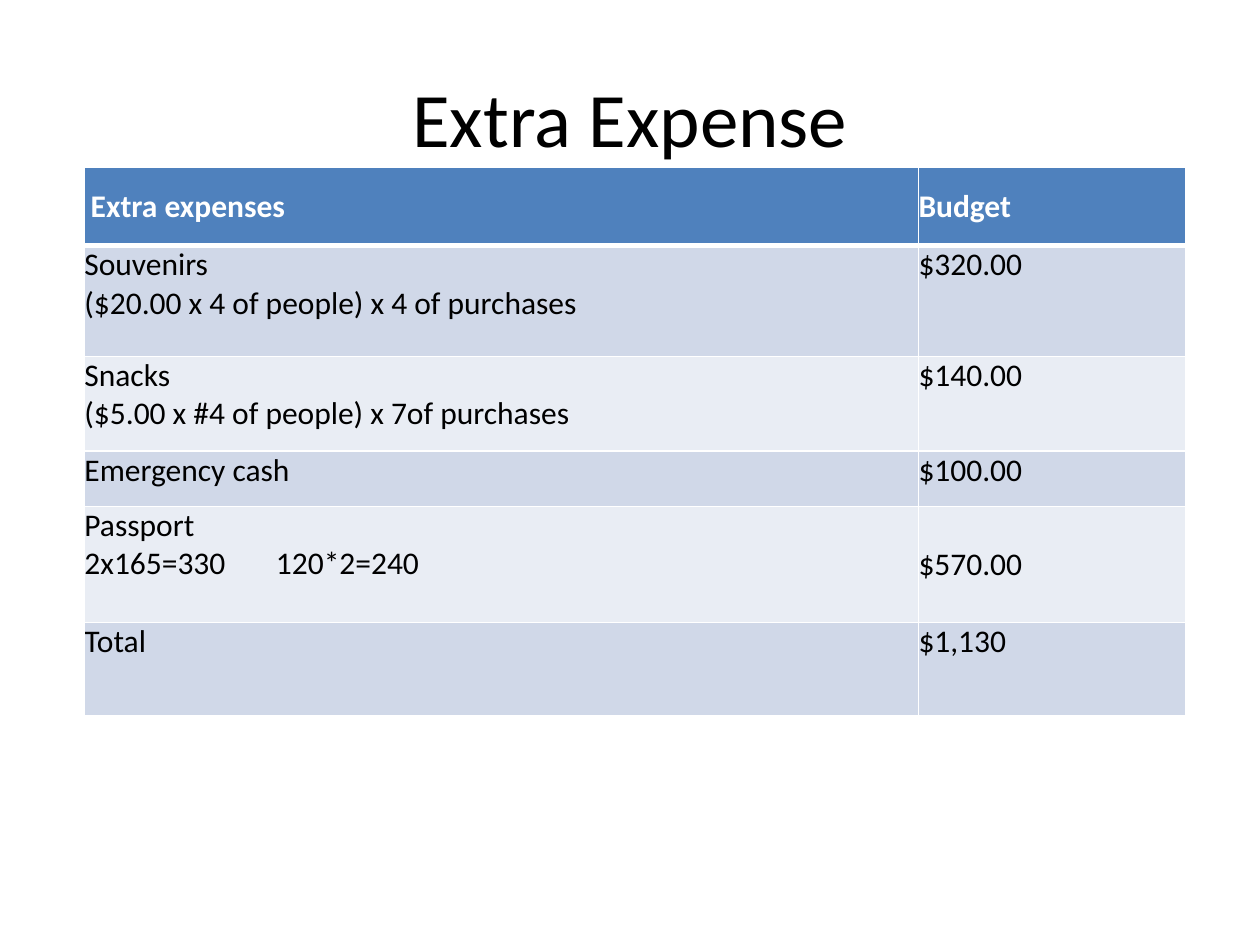
"""Build the extra expense budget slide."""
from pptx import Presentation
from pptx import util as u
from pptx.dml.color import RGBColor
from pptx.enum import text
from pptx.oxml.ns import qn
from lxml import etree

BLACK = RGBColor(0x00, 0x00, 0x00)
WHITE = RGBColor(0xFF, 0xFF, 0xFF)
HEADER_BLUE = RGBColor(0x4F, 0x81, 0xBD)
BANDS = RGBColor(0xD0, 0xD8, 0xE8), RGBColor(0xE9, 0xED, 0xF4)

COLUMN_WIDTHS = 6.62, 2.12
ROW_HEIGHTS = 0.62, 0.88, 0.75, 0.44, 0.92, 0.74
LINE_HEIGHT = 0.31
TAB_STOP = 1.52
EXPENSES = [
    ("Extra expenses", "Budget"),
    ("Souvenirs\n($20.00 x 4 of people) x 4 of purchases", "$320.00"),
    ("Snacks\n($5.00 x #4 of people) x 7of purchases", "$140.00"),
    ("Emergency cash", "$100.00"),
    ("Passport\n2x165=330\t120*2=240", "$570.00"),
    ("Total", "$1,130"),
]


def write(frame, words, size=18, color=BLACK, bold=False, align=text.PP_ALIGN.LEFT, font="Calibri"):
    """Fill a text frame with one formatted paragraph per line."""
    for index, line in enumerate(words.split("\n")):
        para = frame.add_paragraph() if index else frame.paragraphs[0]
        para.alignment = align
        if "\t" in line:
            tabs = etree.SubElement(para._p.get_or_add_pPr(), qn("a:tabLst"))
            etree.SubElement(tabs, qn("a:tab"), pos=str(u.Inches(TAB_STOP)), algn="l")
        span = para.add_run()
        span.text = line
        span.font.name = font
        span.font.size = u.Pt(size)
        span.font.bold = bold
        span.font.color.rgb = color


class SlideBuilder:
    """Hold the border style and the current slide."""

    def __init__(self, slide, border_color=WHITE):
        self.slide = slide
        self.border_color = border_color

    def title(self, words, left, top, width, height):
        """Add a centred title."""
        box = self.slide.shapes.add_textbox(*map(u.Inches, (left, top, width, height)))
        frame = box.text_frame
        frame.word_wrap = True
        frame.vertical_anchor = text.MSO_ANCHOR.MIDDLE
        write(frame, words, size=44, align=text.PP_ALIGN.CENTER)

    def borders(self, cell, **widths):
        """Draw cell edges, each with its width in points."""
        properties = cell._tc.get_or_add_tcPr()
        for index, (side, width) in enumerate(widths.items()):
            line = etree.Element(qn(f"a:ln{side}"), w=str(u.Pt(width)))
            fill = etree.SubElement(line, qn("a:solidFill"))
            etree.SubElement(fill, qn("a:srgbClr"), val=str(self.border_color))
            properties.insert(index, line)

    def table(self, rows, left, top, widths, heights):
        """Add a banded table with a header row."""
        size = sum(widths), sum(heights)
        frame = self.slide.shapes.add_table(
            len(rows), len(widths), *map(u.Inches, (left, top, *size)))
        table = frame.table
        for column, width in zip(table.columns, widths):
            column.width = u.Inches(width)
        for row, height in zip(table.rows, heights):
            row.height = u.Inches(height)
        for number, row in enumerate(rows):
            header = number == 0
            for column, words in enumerate(row):
                cell = table.cell(number, column)
                cell.margin_left = cell.margin_right = cell.margin_top = cell.margin_bottom = 0
                cell.fill.solid()
                cell.fill.fore_color.rgb = HEADER_BLUE if header else BANDS[(number - 1) % 2]
                cell.vertical_anchor = text.MSO_ANCHOR.MIDDLE if header else text.MSO_ANCHOR.TOP
                write(cell.text_frame, words, color=WHITE if header else BLACK, bold=header)
                self.borders(cell, L=1, R=1, T=3 if number == 1 else 1, B=3 if header else 1)
        return table


def main():
    """Build and save the deck."""
    deck = Presentation()
    deck.slide_width, deck.slide_height = u.Inches(10), u.Inches(7.5)
    page = SlideBuilder(deck.slides.add_slide(deck.slide_layouts[6]))
    page.title("Extra Expense", 0.5, 0.3, 9, 1.25)
    budget = page.table(EXPENSES, 0.67, 1.33, COLUMN_WIDTHS, ROW_HEIGHTS)
    budget.cell(0, 0).margin_left = u.Inches(0.05)
    budget.cell(4, 1).margin_top = u.Inches(LINE_HEIGHT)
    deck.save("out.pptx")


if __name__ == "__main__":
    main()
